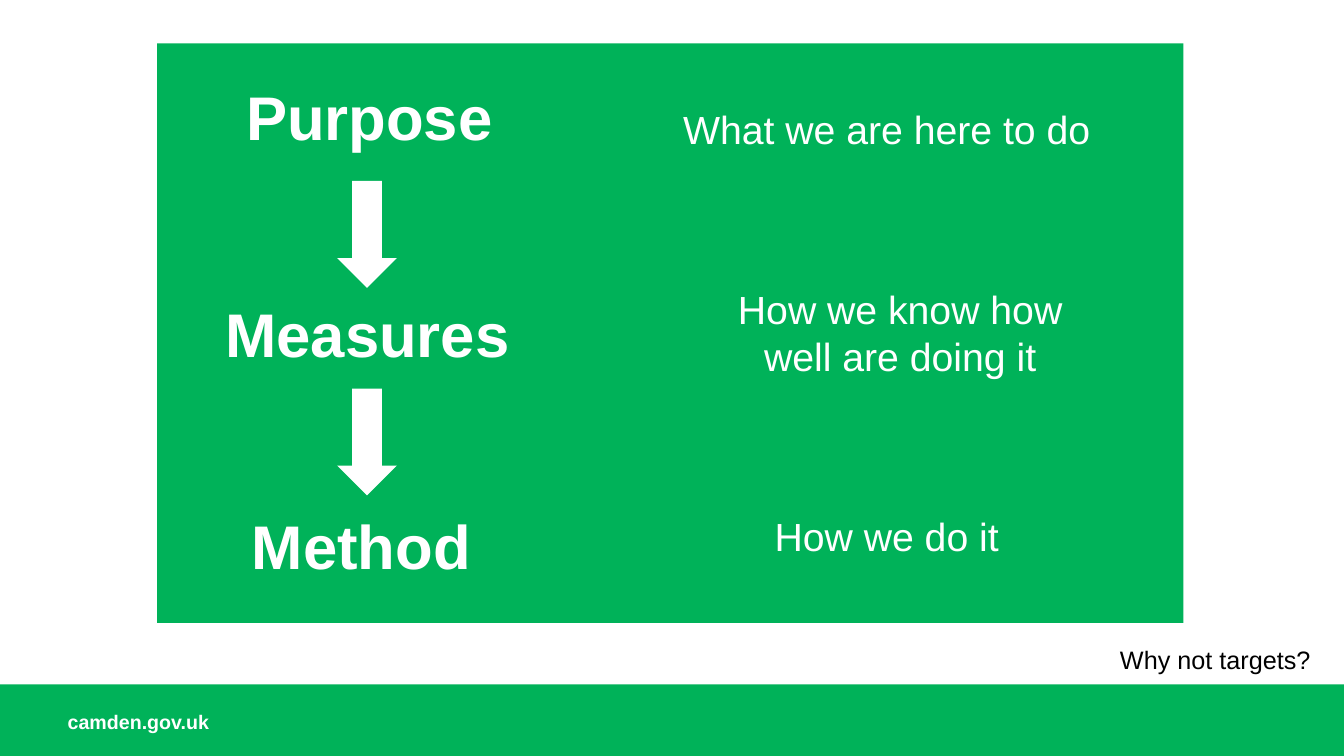
from pptx import Presentation
from pptx.dml.color import RGBColor
from pptx.enum.shapes import MSO_SHAPE
from pptx.enum.text import PP_ALIGN
from pptx.util import Inches, Pt

GREEN = RGBColor(0x00, 0xB2, 0x59)
WHITE = RGBColor(0xFF, 0xFF, 0xFF)
BLACK = RGBColor(0x00, 0x00, 0x00)


class SlideBuilder:
    """Draws on one slide; every box is left, top, width, height in percent of the slide."""

    font_name = "Arial"

    def __init__(self, presentation):
        self.presentation = presentation
        blank_layout = presentation.slide_layouts[6]
        self.slide = presentation.slides.add_slide(blank_layout)

    def place(self, box):
        width = self.presentation.slide_width
        height = self.presentation.slide_height
        sizes = (width, height, width, height)
        return [round(share * size / 100) for share, size in zip(box, sizes)]

    def solid(self, preset, box, color):
        shape = self.slide.shapes.add_shape(preset, *self.place(box))
        shape.shadow.inherit = False
        shape.fill.solid()
        shape.fill.fore_color.rgb = color
        shape.line.fill.background()
        return shape

    def panel(self, box):
        self.solid(MSO_SHAPE.RECTANGLE, box, GREEN)

    def down_arrow(self, box):
        self.solid(MSO_SHAPE.RIGHT_ARROW, box, WHITE).rotation = 90

    def text(self, words, box, size, color=WHITE, bold=False,
             alignment=PP_ALIGN.CENTER, wrap=True):
        text_frame = self.slide.shapes.add_textbox(*self.place(box)).text_frame
        text_frame.word_wrap = wrap
        text_frame.text = words
        paragraph = text_frame.paragraphs[0]
        paragraph.alignment = alignment
        font = paragraph.runs[0].font
        font.name = self.font_name
        font.size = Pt(size)
        font.bold = bold
        font.color.rgb = color
        return text_frame

    def footer(self, words):
        self.panel((0, 90.53, 100, 9.47))
        text_frame = self.text(words, (5.03, 93.87, 41.18, 3.2), 14,
                               bold=True, alignment=PP_ALIGN.LEFT)
        text_frame.margin_left = text_frame.margin_top = text_frame.margin_bottom = 0


def main():
    presentation = Presentation()
    presentation.slide_width = Inches(13.33)
    presentation.slide_height = Inches(7.5)
    builder = SlideBuilder(presentation)

    builder.footer("camden.gov.uk")
    builder.panel((11.7, 5.73, 76.35, 76.67))

    stages = [("Purpose", 15.68, 9.73), ("Measures", 15.53, 38.53), ("Method", 15.08, 66.53)]
    for stage, left, top in stages:
        builder.text(stage, (left, top, 23.63, 11.2), 44, bold=True)

    meanings = [
        ("What we are here to do", (49.88, 13.33, 32.18, 7.6), False),
        ("How we know how well are doing it", (51.9, 37.07, 30.15, 13.87), True),
        ("How we do it", (56.78, 67.07, 18.38, 7.6), False),
    ]
    for meaning, box, wrap in meanings:
        builder.text(meaning, box, 28, wrap=wrap)

    for arrow_top in (27.07, 54.53):
        builder.down_arrow((23.33, arrow_top, 7.95, 7.87))

    builder.text("Why not targets?", (73.8, 84.53, 24.45, 5.33), 18,
                 color=BLACK, alignment=PP_ALIGN.RIGHT)

    presentation.save("out.pptx")


if __name__ == "__main__":
    main()
